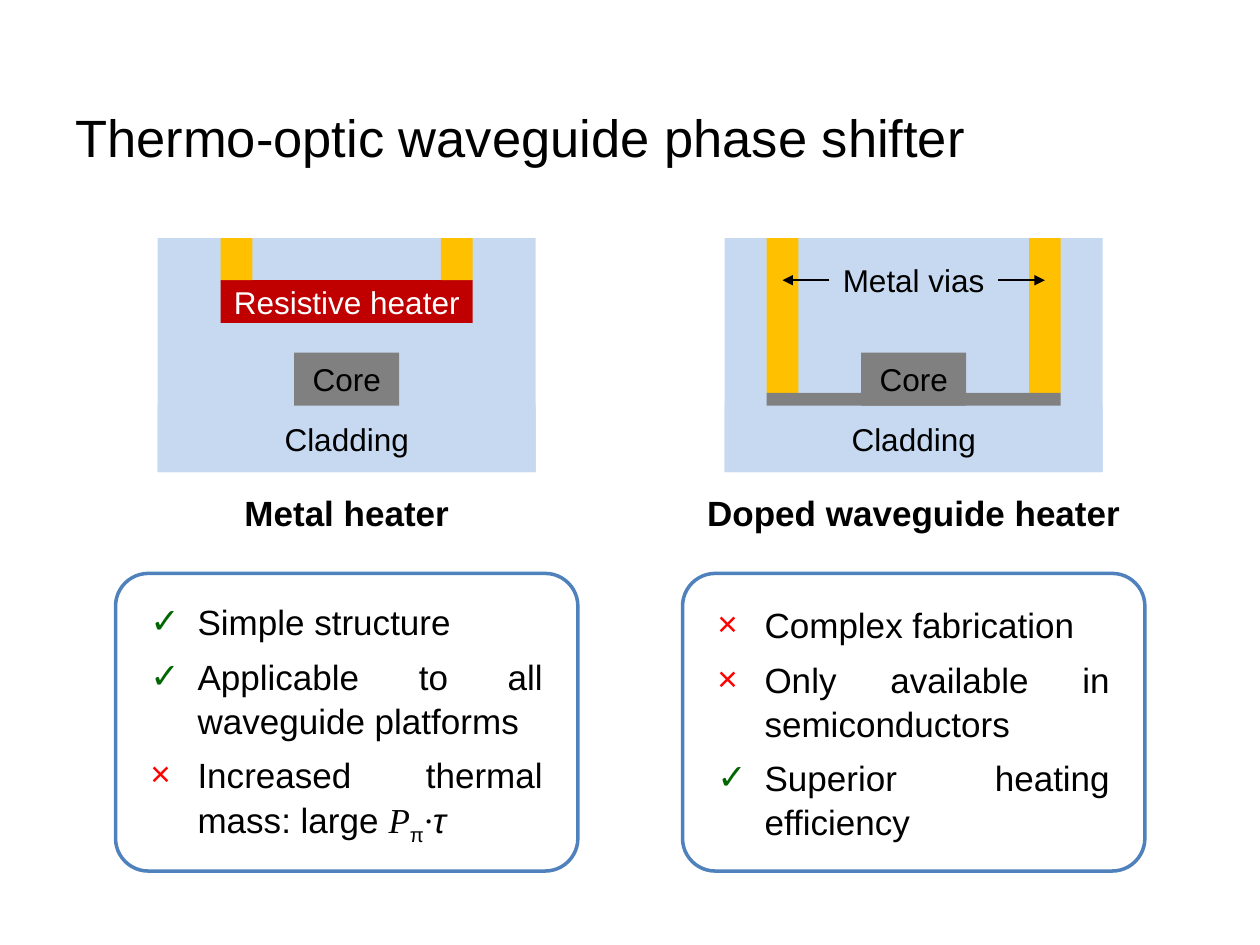
import pptx
import pptx.util
import pptx.dml.color
import pptx.enum.shapes
import pptx.enum.text
import pptx.oxml
import pptx.oxml.ns

Cm, Pt = pptx.util.Cm, pptx.util.Pt
RGBColor = pptx.dml.color.RGBColor
MSO_SHAPE = pptx.enum.shapes.MSO_SHAPE
PP_ALIGN = pptx.enum.text.PP_ALIGN
MSO_ANCHOR = pptx.enum.text.MSO_ANCHOR
qn = pptx.oxml.ns.qn

BLACK = RGBColor(0x00, 0x00, 0x00)
WHITE = RGBColor(0xFF, 0xFF, 0xFF)
CLADDING = RGBColor(0xC6, 0xD9, 0xF1)
CORE = RGBColor(0x80, 0x80, 0x80)
HEATER = RGBColor(0xC0, 0x00, 0x00)
METAL = RGBColor(0xFF, 0xC0, 0x00)
FRAME = RGBColor(0x4F, 0x81, 0xBD)
PRO = RGBColor(0x00, 0x66, 0x00)
CON = RGBColor(0xFF, 0x00, 0x00)
BULLETS = {"✓": PRO, "×": CON}

# Sizes in cm
CLAD_W, CLAD_H, CLAD_TEXT_H = 7.62, 4.72, 1.35
VIA_W = 0.64
CORE_W, CORE_H, CORE_Y = 2.12, 1.07, 2.31
PANEL_W, PANEL_H = 9.32, 6


def style_run(r, size, color=BLACK, bold=None, font="Arial"):
    r.font.name = font
    r.font.size = Pt(size)
    r.font.bold = bold
    r.font.color.rgb = color


def add_block(slide, x, y, w, h, fill, text="", color=BLACK):
    s = slide.shapes.add_shape(MSO_SHAPE.RECTANGLE, Cm(x), Cm(y), Cm(w), Cm(h))
    s.shadow.inherit = False
    s.fill.solid()
    s.fill.fore_color.rgb = fill
    s.line.fill.background()
    if text:
        tf = s.text_frame
        tf.margin_left = tf.margin_right = 0
        tf.vertical_anchor = MSO_ANCHOR.MIDDLE
        tf.text = text
        p = tf.paragraphs[0]
        p.alignment = PP_ALIGN.CENTER
        style_run(p.runs[0], 18, color)


def add_label(slide, x, y, w, h, text, size, bold=None, align=PP_ALIGN.CENTER, wrap=False):
    tf = slide.shapes.add_textbox(Cm(x), Cm(y), Cm(w), Cm(h)).text_frame
    tf.word_wrap = wrap
    tf.vertical_anchor = MSO_ANCHOR.MIDDLE
    tf.text = text
    p = tf.paragraphs[0]
    p.alignment = align
    style_run(p.runs[0], size, bold=bold)


def add_arrow(slide, x1, x2, y):
    c = slide.shapes.add_connector(
        pptx.enum.shapes.MSO_CONNECTOR.STRAIGHT, Cm(x1), Cm(y), Cm(x2), Cm(y))
    c.line.color.rgb = BLACK
    c.line.width = Pt(1)
    ln = c.line._get_or_add_ln()
    ln.append(pptx.oxml.parse_xml(
        f'<a:tailEnd {pptx.oxml.ns.nsdecls("a")} type="triangle"/>'))
    spPr = c._element.spPr
    spPr.append(spPr.makeelement(qn("a:effectLst"), {}))


def add_cladding(slide, x, y):
    add_block(slide, x, y, CLAD_W, CLAD_H, CLADDING)
    add_block(slide, x, y + CLAD_H - CLAD_TEXT_H, CLAD_W, CLAD_TEXT_H, CLADDING, "Cladding")


def add_core(slide, x, y):
    add_block(slide, x + (CLAD_W - CORE_W) / 2, y + CORE_Y, CORE_W, CORE_H, CORE, "Core")


def metal_heater(slide, x, y):
    """Heater strip above the core, contacted by two short vias."""
    heater_w, depth = 5.08, 0.85
    left = x + (CLAD_W - heater_w) / 2
    add_cladding(slide, x, y)
    add_core(slide, x, y)
    add_block(slide, left, y + depth, heater_w, 0.86, HEATER, "Resistive heater", WHITE)
    for via_x in (left, left + heater_w - VIA_W):
        add_block(slide, via_x, y, VIA_W, depth, METAL)


def doped_heater(slide, x, y):
    """Core on a doped slab, contacted by two long vias."""
    slab_w, slab_h, depth = 5.93, 0.26, 3.12
    left = x + (CLAD_W - slab_w) / 2
    right = left + slab_w
    add_cladding(slide, x, y)
    for via_x in (left, right - VIA_W):
        add_block(slide, via_x, y, VIA_W, depth, METAL)
    add_block(slide, left, y + depth, slab_w, slab_h, CORE)
    add_core(slide, x, y)
    # Label with an arrow to the middle of each via
    label_w = 3.4
    label_x = x + (CLAD_W - label_w) / 2
    add_label(slide, label_x, y + 0.33, label_w, 1.02, "Metal vias", 18)
    add_arrow(slide, label_x, left + VIA_W / 2, y + 0.85)
    add_arrow(slide, label_x + label_w, right - VIA_W / 2, y + 0.85)


def set_bullet(p, char):
    pPr = p._p.get_or_add_pPr()
    pPr.set("marL", str(Cm(0.95)))
    pPr.set("indent", str(-Cm(0.95)))
    clr = pPr.makeelement(qn("a:buClr"), {})
    clr.append(clr.makeelement(qn("a:srgbClr"), {"val": str(BULLETS[char])}))
    pPr.append(clr)
    pPr.append(pPr.makeelement(qn("a:buFont"), {"typeface": "Arial"}))
    pPr.append(pPr.makeelement(qn("a:buChar"), {"char": char}))


def pros_and_cons(slide, x, y, items):
    """Rounded frame; each item is a bullet and its (text, font, italic, baseline) runs."""
    s = slide.shapes.add_shape(
        MSO_SHAPE.ROUNDED_RECTANGLE, Cm(x), Cm(y), Cm(PANEL_W), Cm(PANEL_H))
    s.adjustments[0] = 0.11
    s.shadow.inherit = False
    s.fill.solid()
    s.fill.fore_color.rgb = WHITE
    s.line.color.rgb = FRAME
    s.line.width = Pt(2)
    tf = s.text_frame
    tf.word_wrap = True
    tf.vertical_anchor = MSO_ANCHOR.MIDDLE
    tf.margin_left = tf.margin_right = tf.margin_top = tf.margin_bottom = Cm(0.51)
    for i, (bullet, runs) in enumerate(items):
        p = tf.add_paragraph() if i else tf.paragraphs[0]
        set_bullet(p, bullet)
        p.alignment = PP_ALIGN.JUSTIFY
        p.line_spacing = 1.05
        p.space_before = Pt(6 if i else 0)
        for text, font, italic, baseline in runs:
            r = p.add_run()
            r.text = text
            style_run(r, 20, font=font)
            r.font.italic = italic
            if baseline:
                r.font._element.set("baseline", str(baseline * 1000))


def plain(text):
    return [(text, "Arial", None, 0)]


def column(slide, x, y, diagram, caption, caption_w, items):
    """Diagram, caption and assessment, centred on one another."""
    diagram(slide, x + (PANEL_W - CLAD_W) / 2, y)
    add_label(slide, x + (PANEL_W - caption_w) / 2, y + 4.97, caption_w, 1.11, caption, 20, True)
    pros_and_cons(slide, x, y + 6.76, items)


def main():
    prs = pptx.Presentation()
    prs.slide_width, prs.slide_height = Cm(25.4), Cm(19.05)
    slide = prs.slides.add_slide(prs.slide_layouts[6])

    # Title
    add_label(slide, 1.27, 1.27, 22.86, 2.97, "Thermo-optic waveguide phase shifter",
              30, align=PP_ALIGN.LEFT, wrap=True)

    # Two heater types side by side
    column(slide, 2.33, 4.8, metal_heater, "Metal heater", 4.67, [
        ("✓", plain("Simple structure")),
        ("✓", plain("Applicable to all waveguide platforms")),
        ("×", plain("Increased thermal mass: large ") + [
            ("P", "Times New Roman", True, 0),
            ("π", "Arial", False, -25),
            ("·", "Times New Roman", True, 0),
            ("τ", "Arial", True, 0)]),
    ])
    column(slide, 13.76, 4.8, doped_heater, "Doped waveguide heater", 8.92, [
        ("×", plain("Complex fabrication")),
        ("×", plain("Only available in semiconductors")),
        ("✓", plain("Superior heating efficiency")),
    ])
    prs.save("out.pptx")


if __name__ == "__main__":
    main()
